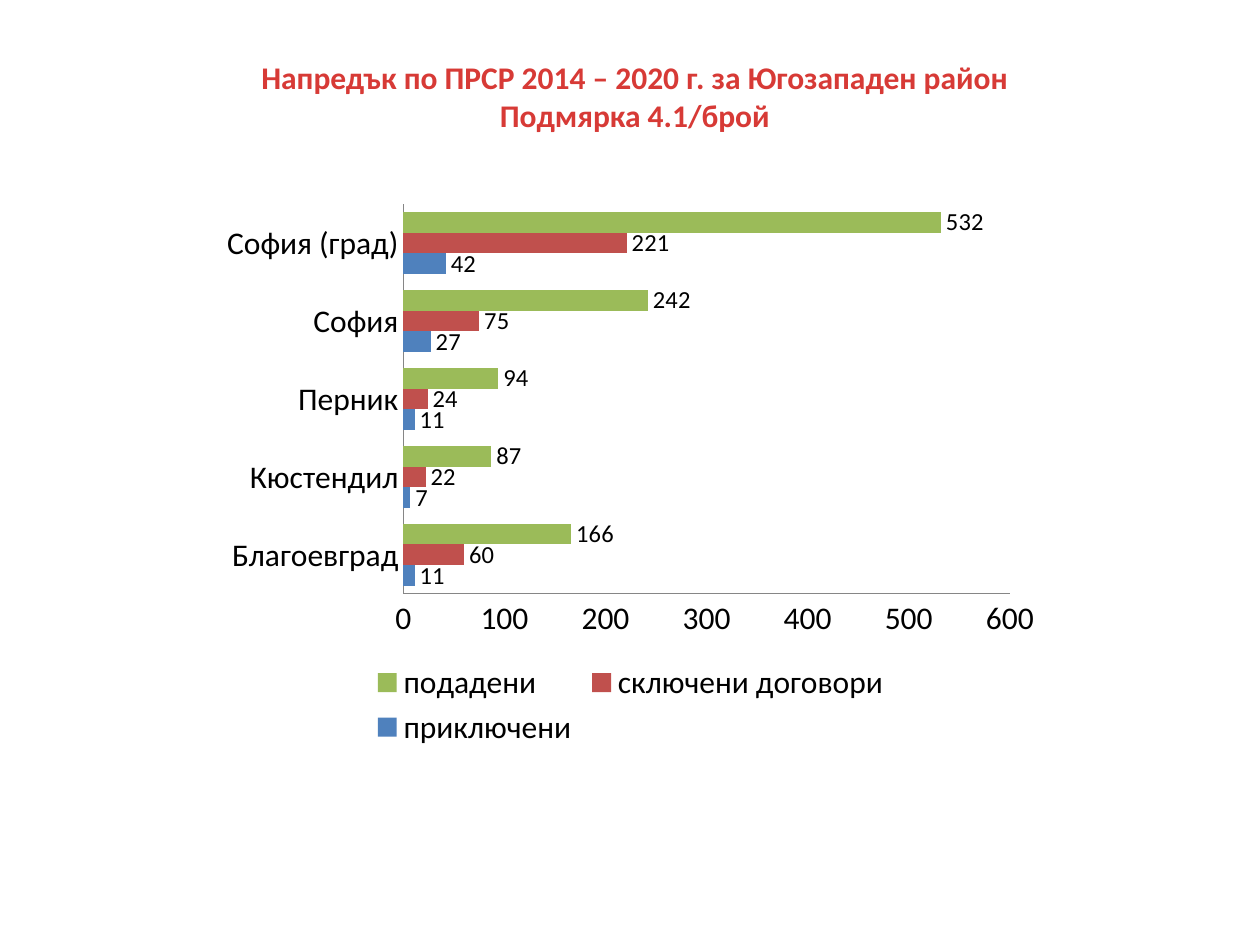
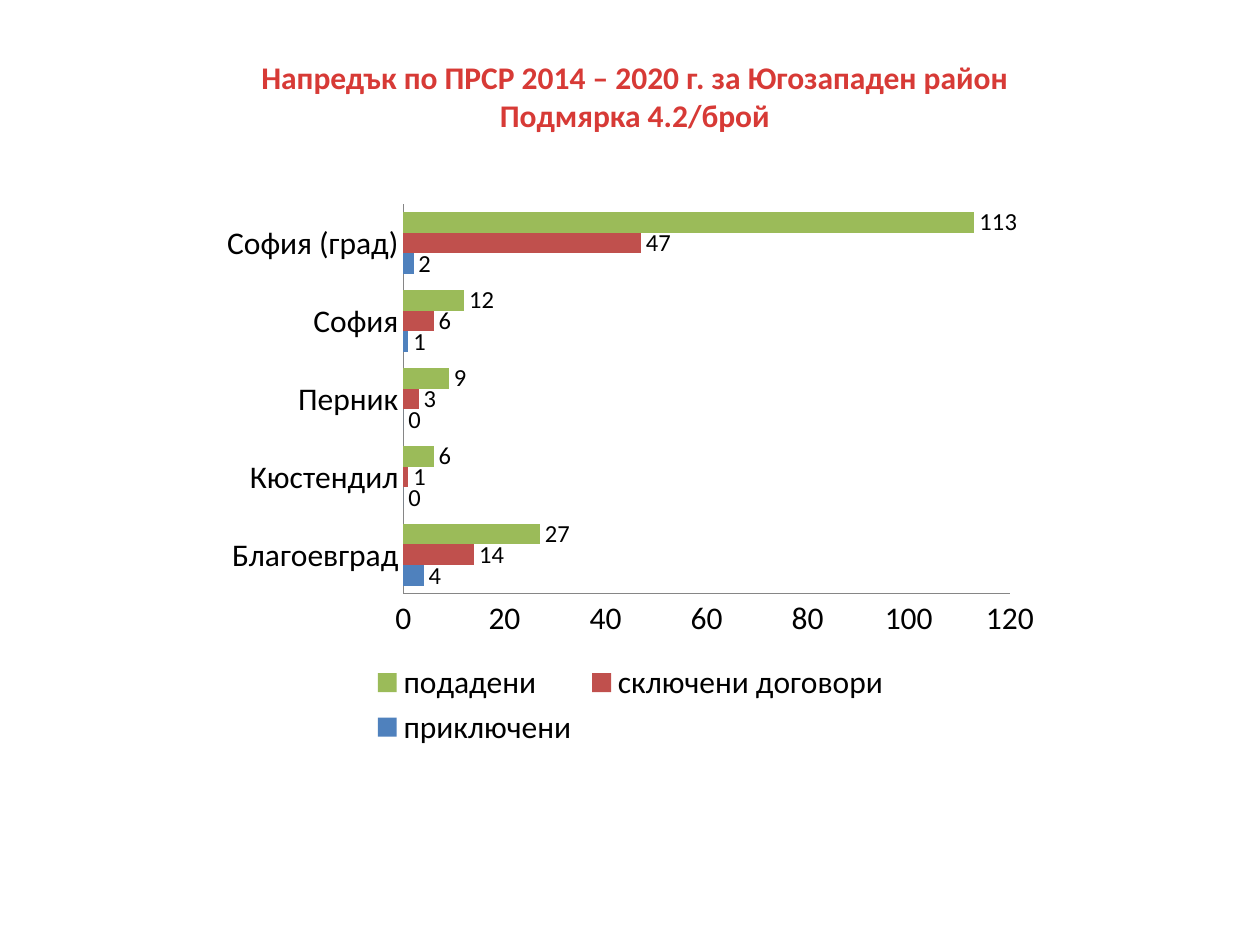
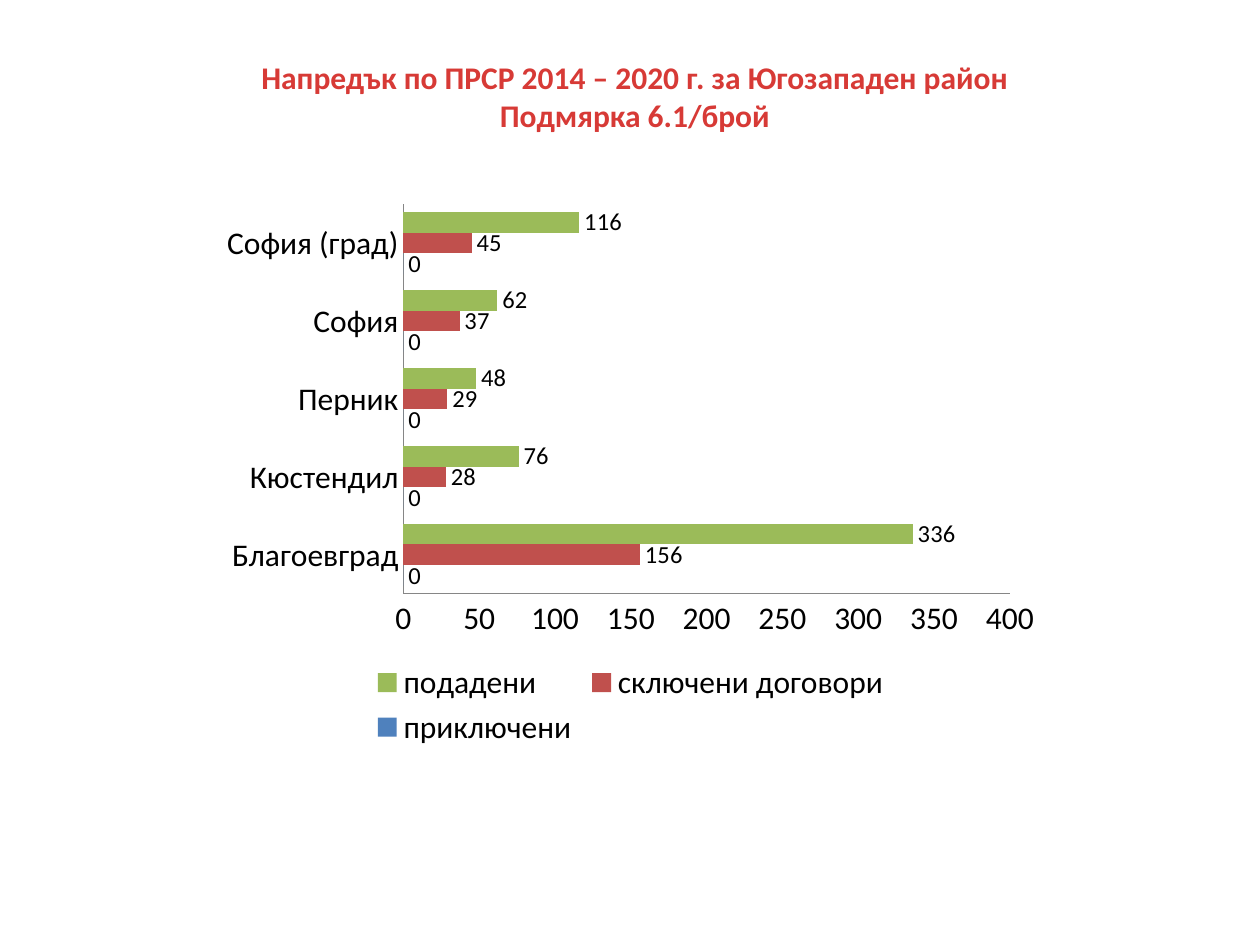
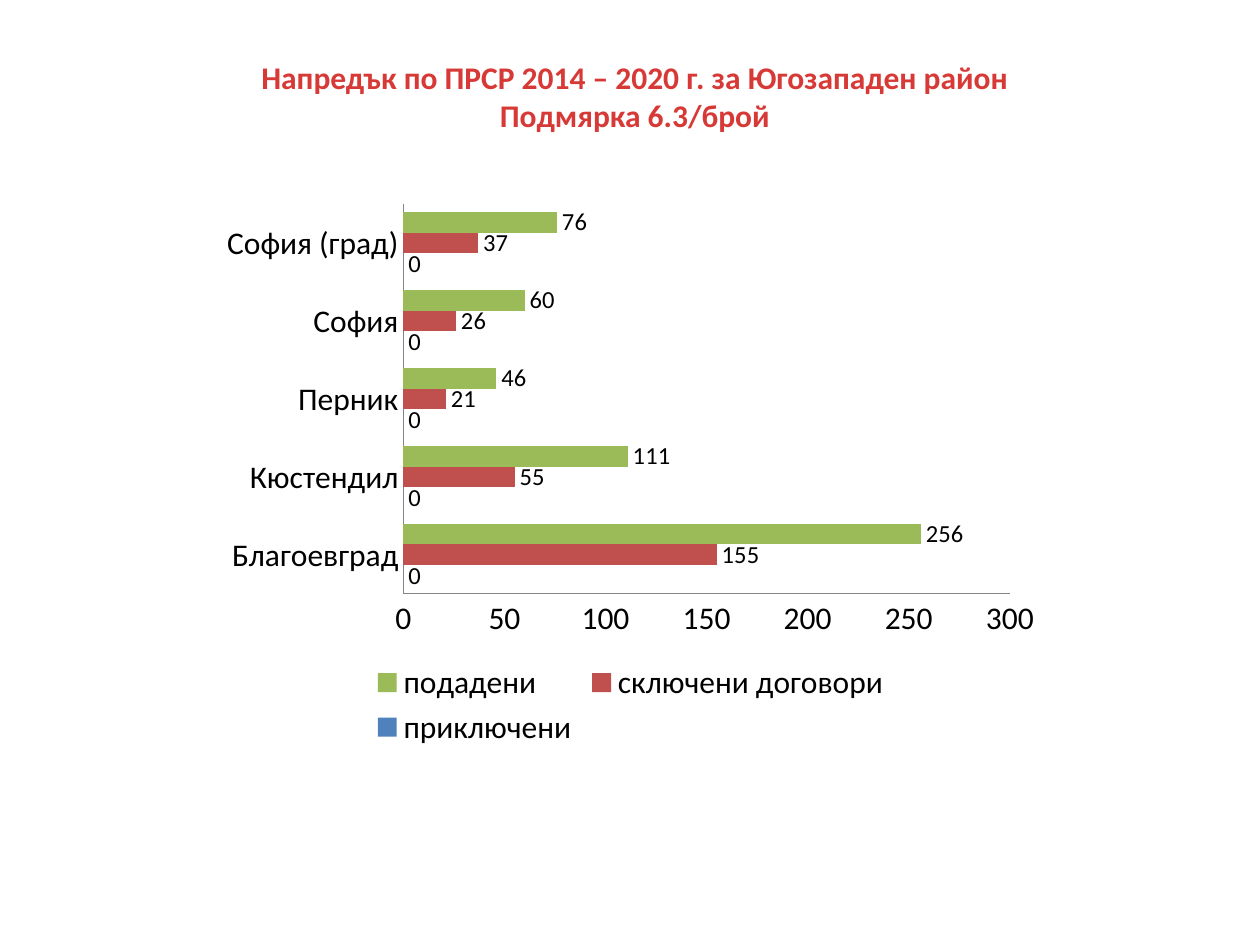
from dataclasses import dataclass

from lxml import etree
from pptx import Presentation
from pptx.chart.data import CategoryChartData
from pptx.dml.color import RGBColor
from pptx.enum.chart import XL_CHART_TYPE, XL_LABEL_POSITION, XL_LEGEND_POSITION, XL_TICK_MARK
from pptx.enum.text import MSO_AUTO_SIZE, PP_ALIGN
from pptx.oxml.ns import qn
from pptx.slide import Slide
from pptx.text.text import Font
from pptx.util import Cm, Pt

BAR_CLUSTERED = XL_CHART_TYPE.BAR_CLUSTERED
OUTSIDE_END = XL_LABEL_POSITION.OUTSIDE_END
LEGEND_BOTTOM = XL_LEGEND_POSITION.BOTTOM
NO_TICKS = XL_TICK_MARK.NONE
FIT_SHAPE = MSO_AUTO_SIZE.SHAPE_TO_FIT_TEXT
CENTER = PP_ALIGN.CENTER

FONT = "Calibri"
COLORS = {
    "title": "D73A36",
    "text": "000000",
    "axis": "868686",
    "приключени": "4F81BD",
    "сключени договори": "C0504D",
    "подадени": "9BBB59",
}
STAGES = ("приключени", "сключени договори", "подадени")
REGIONS = ("Благоевград", "Кюстендил", "Перник", "София", "София (град)")
HEADING = "Напредък по ПРСР 2014 – 2020 г. за Югозападен район"


@dataclass(frozen=True)
class Measure:
    code: str
    completed: tuple[int, ...]
    contracted: tuple[int, ...]
    submitted: tuple[int, ...]


MEASURES = (
    Measure("4.1", (11, 7, 11, 27, 42), (60, 22, 24, 75, 221), (166, 87, 94, 242, 532)),
    Measure("4.2", (4, 0, 0, 1, 2), (14, 1, 3, 6, 47), (27, 6, 9, 12, 113)),
    Measure("6.1", (0, 0, 0, 0, 0), (156, 28, 29, 37, 45), (336, 76, 48, 62, 116)),
    Measure("6.3", (0, 0, 0, 0, 0), (155, 55, 21, 26, 37), (256, 111, 46, 60, 76)),
)


def color(name: str) -> RGBColor:
    return RGBColor.from_string(COLORS[name])


def style_font(font: Font, size: int, color_name: str, bold: bool = False) -> None:
    font.name = FONT
    font.size = Pt(size)
    font.bold = bold
    font.color.rgb = color(color_name)


def outline_text(properties: etree._Element, color_name: str) -> None:
    line = etree.Element(qn("a:ln"), w=str(Pt(1.42)))
    fill = etree.SubElement(line, qn("a:solidFill"))
    etree.SubElement(fill, qn("a:srgbClr"), val=COLORS[color_name])
    properties.insert(0, line)


def add_title(page: Slide, measure: Measure) -> None:
    box = page.shapes.add_textbox(Cm(1.37), Cm(1.04), Cm(22.86), Cm(1.8))
    frame = box.text_frame
    frame.word_wrap = True
    frame.auto_size = FIT_SHAPE
    para = frame.paragraphs[0]
    para.text = f"{HEADING}\vПодмярка {measure.code}/брой"
    para.alignment = CENTER
    style_font(para.font, 18, "title", bold=True)
    outline_text(para._p.pPr.find(qn("a:defRPr")), "title")


def add_progress_chart(page: Slide, measure: Measure) -> None:
    data = CategoryChartData()
    data.categories = REGIONS
    for stage, counts in zip(STAGES, (measure.completed, measure.contracted, measure.submitted)):
        data.add_series(stage, counts)
    chart = page.shapes.add_chart(
        BAR_CLUSTERED, Cm(4.24), Cm(3.89), Cm(16.94), Cm(11.28), data
    ).chart
    style_font(chart.font, 18, "text")
    chart.has_title = False
    chart.has_legend = True
    chart.legend.position = LEGEND_BOTTOM
    chart.legend.include_in_layout = False

    for axis in (chart.category_axis, chart.value_axis):
        axis.has_major_gridlines = False
        axis.major_tick_mark = NO_TICKS
        axis.minor_tick_mark = NO_TICKS
        axis.format.line.color.rgb = color("axis")
        axis.format.line.width = Pt(0.75)

    plot = chart.plots[0]
    plot.gap_width = 75
    plot.vary_by_categories = False
    for series in plot.series:
        series.format.fill.solid()
        series.format.fill.fore_color.rgb = color(series.name)
        series.invert_if_negative = False
        labels = series.data_labels
        labels.show_value = True
        labels.position = OUTSIDE_END
        style_font(labels.font, 14, "text")


def main() -> None:
    deck = Presentation()
    deck.slide_width = Cm(25.4)
    deck.slide_height = Cm(19.05)
    blank = deck.slide_layouts[6]
    for measure in MEASURES:
        page = deck.slides.add_slide(blank)
        add_title(page, measure)
        add_progress_chart(page, measure)
    deck.save("out.pptx")


if __name__ == "__main__":
    main()
